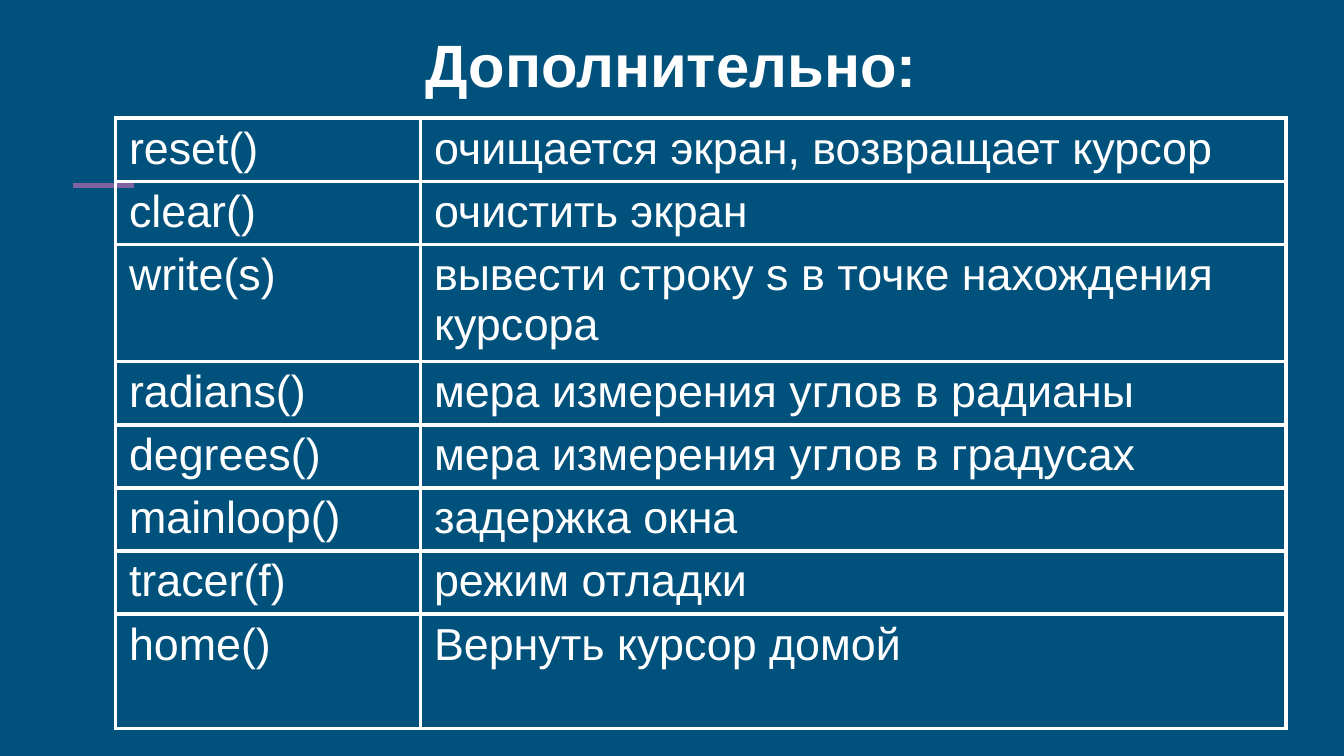
"""Build a slide listing additional turtle commands in a two-column table."""
from lxml.etree import SubElement
from pptx import Presentation
from pptx.dml.color import RGBColor
from pptx.enum.shapes import MSO_CONNECTOR
from pptx.enum.text import MSO_ANCHOR, PP_ALIGN
from pptx.oxml import parse_xml
from pptx.oxml.ns import nsdecls, qn
from pptx.util import Inches, Pt

COLORS = {"background": "00517C", "text": "FFFFFF", "border": "FFFFFF", "accent": "8064A2"}
COMMANDS = [
    ("reset()", "очищается экран, возвращает курсор", 0.47),
    ("сlear()", "очистить экран", 0.47),
    ("write(s)", "вывести строку s в точке нахождения курсора", 0.85),
    ("radians()", "мера измерения углов в радианы", 0.47),
    ("degrees()", "мера измерения углов в градусах", 0.47),
    ("mainloop()", "задержка окна", 0.47),
    ("tracer(f)", "режим отладки", 0.47),
    ("home()", "Вернуть курсор домой", 0.85),
]
COLUMN_WIDTHS = [2.27, 6.44]


def style_text(paragraph, size, bold=False):
    for run in paragraph.runs:
        run.font.name = "Arial"
        run.font.size = Pt(size)
        run.font.bold = bold
        run.font.color.rgb = RGBColor.from_string(COLORS["text"])


def add_borders(cell):
    properties = cell._tc.get_or_add_tcPr()
    for position, side in enumerate(("lnL", "lnR", "lnT", "lnB")):
        properties.insert(position, parse_xml(
            f'<a:{side} {nsdecls("a")} w="{Pt(2.25)}"><a:solidFill>'
            f'<a:srgbClr val="{COLORS["border"]}"/></a:solidFill></a:{side}>'))


prs = Presentation()
prs.slide_width = Inches(10)
prs.slide_height = Inches(10) * 9 // 16
slide = prs.slides.add_slide(prs.slide_layouts[6])
slide.background.fill.solid()
slide.background.fill.fore_color.rgb = RGBColor.from_string(COLORS["background"])

accent = slide.shapes.add_connector(
    MSO_CONNECTOR.STRAIGHT, Inches(0.54), Inches(1.38), Inches(1), Inches(1.38))
accent.line.color.rgb = RGBColor.from_string(COLORS["accent"])
accent.line.width = Pt(3)
SubElement(accent._element.spPr, qn("a:effectLst"))

heading = slide.shapes.add_textbox(Inches(0.42), Inches(0.13), Inches(9.15), Inches(0.75)).text_frame
heading.word_wrap = True
heading.vertical_anchor = MSO_ANCHOR.MIDDLE
heading.margin_left = heading.margin_right = heading.margin_top = heading.margin_bottom = 0
heading.text = "Дополнительно:"
heading.paragraphs[0].alignment = PP_ALIGN.CENTER
heading.paragraphs[0].line_spacing = 0.9
style_text(heading.paragraphs[0], 32, bold=True)

commands = slide.shapes.add_table(
    len(COMMANDS), len(COLUMN_WIDTHS), Inches(0.86), Inches(0.88),
    Inches(sum(COLUMN_WIDTHS)), Inches(sum(height for *_, height in COMMANDS))).table
commands.first_row = False
commands.horz_banding = False
for column, width in zip(commands.columns, COLUMN_WIDTHS):
    column.width = Inches(width)
for row, (command, meaning, height) in zip(commands.rows, COMMANDS):
    row.height = Inches(height)
    for cell, wording in zip(row.cells, (command, meaning)):
        cell.text_frame.text = wording
        style_text(cell.text_frame.paragraphs[0], 24)
        cell.margin_top = Inches(0.04)
        cell.margin_bottom = Inches(0.03)
        cell.fill.background()
        add_borders(cell)

prs.save("out.pptx")
